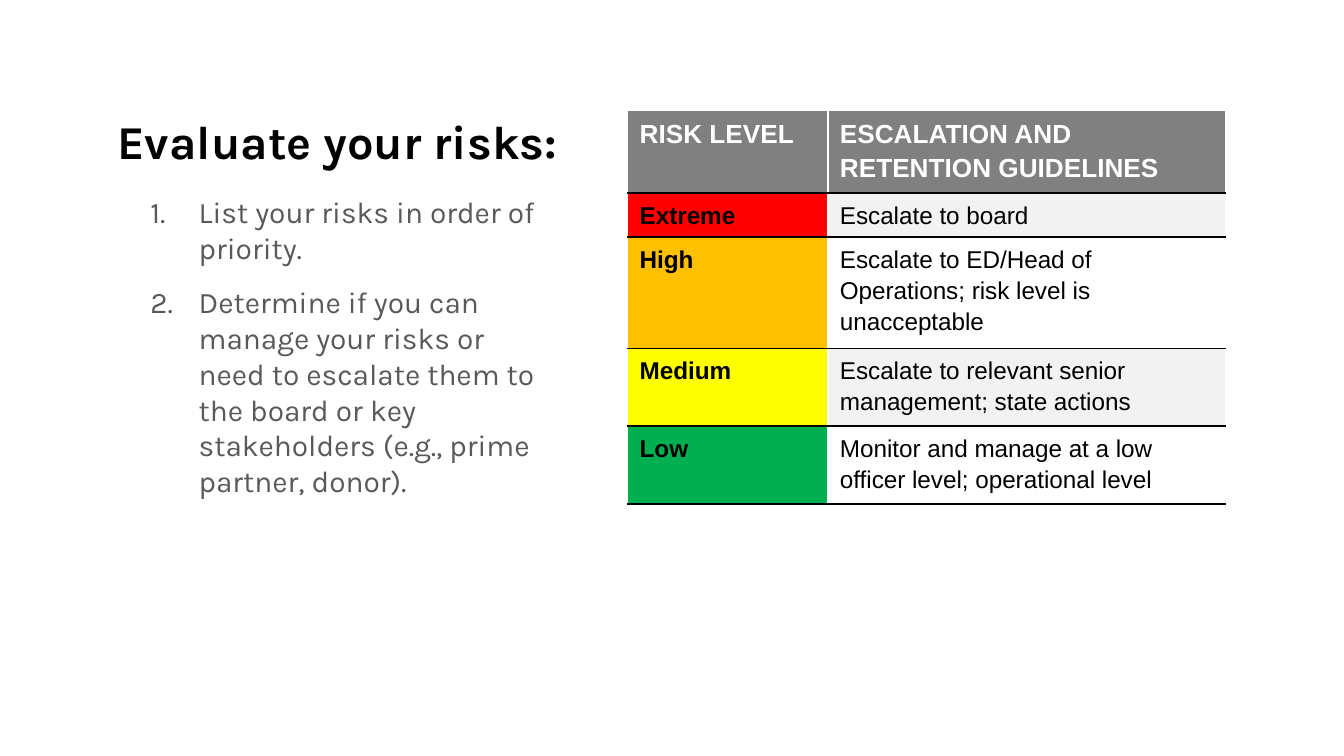
"""Build a slide that pairs a numbered list with a risk level table."""
import dataclasses

import pptx
import pptx.dml.color
import pptx.enum.text
import pptx.oxml
import pptx.oxml.ns
import pptx.util

Inches = pptx.util.Inches
ALIGN = pptx.enum.text.PP_ALIGN


@dataclasses.dataclass(frozen=True)
class Theme:
    """Fonts, colours and type sizes."""
    head: str = "Karla"
    cell: str = "Arial"
    black: str = "000000"
    white: str = "FFFFFF"
    text: str = "595959"
    bar: str = "808080"
    band: str = "F2F2F2"
    red: str = "FF0000"
    amber: str = "FFC000"
    yellow: str = "FFFF00"
    green: str = "00B050"
    title: float = 25.2
    body: float = 16
    label: float = 14
    small: float = 13


THEME = Theme()

STEPS = [
    "List your risks in order of priority.",
    "Determine if you can manage your risks or need to escalate them to "
    "the board or key stakeholders (e.g., prime partner, donor).",
]
HEADS = ["RISK LEVEL", "ESCALATION AND RETENTION GUIDELINES"]
RISKS = [
    ("Extreme", THEME.red, "Escalate to board"),
    ("High", THEME.amber,
     "Escalate to ED/Head of Operations; risk level is unacceptable"),
    ("Medium", THEME.yellow,
     "Escalate to relevant senior management; state actions"),
    ("Low", THEME.green,
     "Monitor and manage at a low officer level; operational level"),
]
COLS = [1.49, 2.96]
ROWS = [0.26] + [0.29] * len(RISKS)
SIDE = Inches(3.28)


def rgb(code):
    """Return the colour for a hex code."""
    return pptx.dml.color.RGBColor.from_string(code)


def xml(text):
    """Return an element from markup in the drawing namespace."""
    tag, rest = text.split(" ", 1)
    space = pptx.oxml.ns.nsdecls("a")
    return pptx.oxml.parse_xml(f"<{tag} {space} {rest}")


def write(para, text, *, font, size, color, bold=False, align=ALIGN.LEFT,
          gap=0, line=1.0):
    """Put formatted text in a paragraph."""
    para.alignment = align
    para.line_spacing = line
    para.space_before = para.space_after = pptx.util.Pt(gap)
    run = para.add_run()
    run.text = text
    run.font.name = font
    run.font.size = pptx.util.Pt(size)
    run.font.bold = bold
    run.font.color.rgb = rgb(color)


def add_box(slide, left, top, width, height):
    """Add a wrapping text box and return its frame."""
    box = slide.shapes.add_textbox(*map(Inches, (left, top, width, height)))
    frame = box.text_frame
    frame.word_wrap = True
    frame.margin_left = frame.margin_right = Inches(0.1)
    frame.margin_top = frame.margin_bottom = Inches(0.1)
    return frame


def number(para):
    """Number a paragraph with a hanging indent."""
    props = para._p.get_or_add_pPr()
    props.set("marL", str(Inches(0.5)))
    props.set("indent", str(Inches(-0.36)))
    props.append(xml(f'a:buClr ><a:srgbClr val="{THEME.text}"/></a:buClr>'))
    props.append(xml('a:buAutoNum type="arabicPeriod"/>'))


def add_list(slide, steps):
    """Add the numbered steps."""
    frame = add_box(slide, 0.88, 1.34, 3.29, 3.67)
    for i, step in enumerate(steps):
        para = frame.add_paragraph() if i else frame.paragraphs[0]
        write(para, step, font=THEME.head, size=THEME.body,
              color=THEME.text, gap=10 if i else 0)
        number(para)


def edge(cell, top):
    """Draw white side borders, a black base and the given top."""
    props = cell._tc.get_or_add_tcPr()
    sides = {"L": THEME.white, "R": THEME.white, "T": top, "B": THEME.black}
    for side, color in sides.items():
        props.append(xml(
            f'a:ln{side} w="{pptx.util.Pt(1)}"><a:solidFill>'
            f'<a:srgbClr val="{color}"/></a:solidFill></a:ln{side}>'))


def fill_cell(cell, text, fill, top=THEME.black, **style):
    """Set the text, borders and fill of a cell."""
    cell.margin_left = cell.margin_right = Inches(0.09)
    cell.margin_top = cell.margin_bottom = Inches(0.04)
    write(cell.text_frame.paragraphs[0], text, font=THEME.cell, line=1.15,
          **style)
    edge(cell, top)
    if fill:
        cell.fill.solid()
        cell.fill.fore_color.rgb = rgb(fill)
    else:
        cell.fill.background()


def add_grid(slide):
    """Add the table of risk levels."""
    frame = slide.shapes.add_table(len(ROWS), len(COLS), Inches(4.67),
                                   Inches(0.82), SIDE, SIDE)
    grid = frame.table
    grid.horz_banding = False
    for col, width in zip(grid.columns, COLS):
        col.width = Inches(width)
    for row, height in zip(grid.rows, ROWS):
        row.height = Inches(height)
    frame.width = frame.height = SIDE
    for i, head in enumerate(HEADS):
        fill_cell(grid.cell(0, i), head, THEME.bar, top=THEME.white,
                  size=THEME.label, color=THEME.white, bold=True, gap=12)
    plain = {"size": THEME.small, "color": THEME.black}
    for i, (level, color, guide) in enumerate(RISKS, 1):
        fill_cell(grid.cell(i, 0), level, color, bold=True, gap=12, **plain)
        fill_cell(grid.cell(i, 1), guide, THEME.band if i % 2 else None,
                  **plain)


def main():
    """Build and save the slide."""
    deck = pptx.Presentation()
    deck.slide_width = Inches(10)
    deck.slide_height = deck.slide_width * 9 // 16
    slide = deck.slides.add_slide(deck.slide_layouts[6])
    title = add_box(slide, 0.76, 0.74, 3.59, 0.63)
    write(title.paragraphs[0], "Evaluate your risks: ", font=THEME.head,
          size=THEME.title, color=THEME.black, bold=True, align=ALIGN.CENTER)
    add_list(slide, STEPS)
    add_grid(slide)
    deck.save("out.pptx")


if __name__ == "__main__":
    main()
